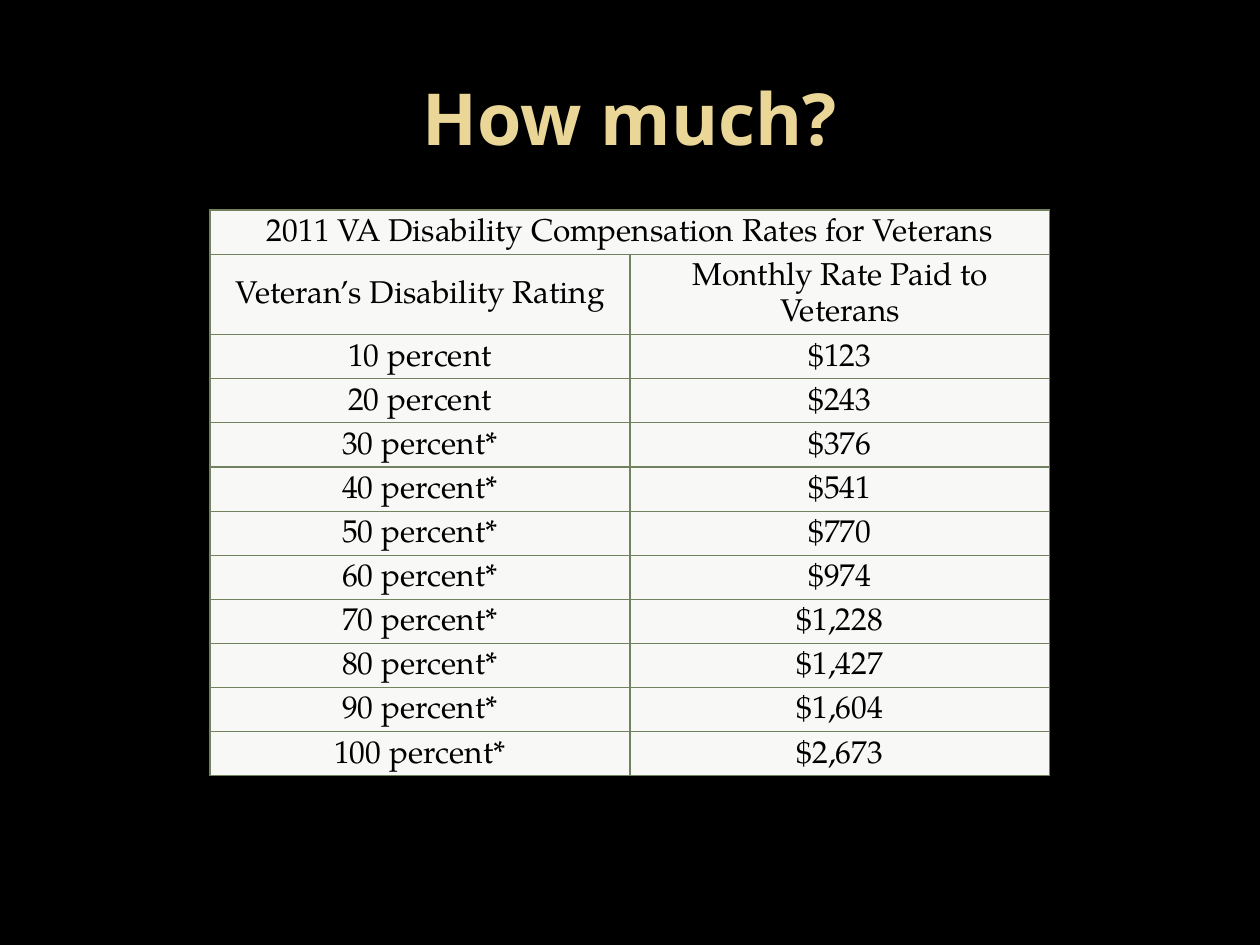
"""Build a slide with a table of disability compensation rates."""
from lxml.etree import SubElement
from pptx import Presentation
from pptx.dml.color import RGBColor
from pptx.enum.text import MSO_ANCHOR, PP_ALIGN
from pptx.oxml.ns import qn
from pptx.util import Inches, Pt

COLORS = {"background": "000000", "title": "EAD696", "cell": "F8F8F7",
          "text": "000000", "border": "72825E"}
TITLE = "How much?"
CAPTION = "2011 VA Disability Compensation Rates for Veterans"
HEADER = ("Veteran’s Disability Rating", "Monthly Rate Paid to Veterans")
RATES = [
    ("10 percent", "$123"),
    ("20 percent", "$243"),
    ("30 percent*", "$376"),
    ("40 percent*", "$541"),
    ("50 percent*", "$770"),
    ("60 percent*", "$974"),
    ("70 percent*", "$1,228"),
    ("80 percent*", "$1,427"),
    ("90 percent*", "$1,604"),
    ("100 percent*", "$2,673"),
]
ROWS = [(CAPTION, ""), HEADER, *RATES]
ROW_HEIGHT, HEADER_HEIGHT = Inches(0.35), Inches(0.64)


def rgb(name):
    return RGBColor.from_string(COLORS[name])


def format_text(tf, font, size, color, bold=False):
    tf.vertical_anchor = MSO_ANCHOR.MIDDLE
    for p in tf.paragraphs:
        p.alignment = PP_ALIGN.CENTER
        for r in p.runs:
            r.font.name, r.font.size, r.font.bold = font, Pt(size), bold
            r.font.color.rgb = rgb(color)


def add_borders(cell):
    tc_pr = cell._tc.get_or_add_tcPr()
    for side in ("lnL", "lnR", "lnT", "lnB"):
        line = SubElement(tc_pr, qn(f"a:{side}"), w=str(Pt(0.75)))
        fill = SubElement(line, qn("a:solidFill"))
        SubElement(fill, qn("a:srgbClr"), val=COLORS["border"])


def fill_cell(cell, text):
    cell.text = text
    cell.margin_left = cell.margin_right = Inches(0.03)
    cell.margin_top = cell.margin_bottom = Inches(0.03)
    format_text(cell.text_frame, "TeX Gyre Pagella", 18, "text")
    cell.vertical_anchor = MSO_ANCHOR.MIDDLE
    p = cell.text_frame.paragraphs[0]
    p.line_spacing, p.space_after = 1.15, Pt(10)
    add_borders(cell)
    cell.fill.solid()
    cell.fill.fore_color.rgb = rgb("cell")


def add_rates(s, width, height):
    row_heights = [ROW_HEIGHT, HEADER_HEIGHT] + [ROW_HEIGHT] * len(RATES)
    table = s.shapes.add_table(len(ROWS), len(HEADER), width // 6, int(height * 2 / 9),
                               width * 2 // 3, sum(row_heights)).table
    for row, row_height, texts in zip(table.rows, row_heights, ROWS):
        row.height = row_height
        for cell, text in zip(row.cells, texts):
            fill_cell(cell, text)
    table.cell(0, 0).merge(table.cell(0, 1))


def main():
    prs = Presentation()
    prs.slide_width, prs.slide_height = Inches(10), Inches(7.5)
    s = prs.slides.add_slide(prs.slide_layouts[5])
    s.background.fill.solid()
    s.background.fill.fore_color.rgb = rgb("background")
    title = s.shapes.title
    title.left, title.top = Inches(0.5), Inches(0.3)
    title.width, title.height = Inches(9), Inches(1.25)
    title.text_frame.text = TITLE
    format_text(title.text_frame, "Open Sans", 41, "title", bold=True)
    add_rates(s, prs.slide_width, prs.slide_height)
    prs.save("out.pptx")


if __name__ == "__main__":
    main()
